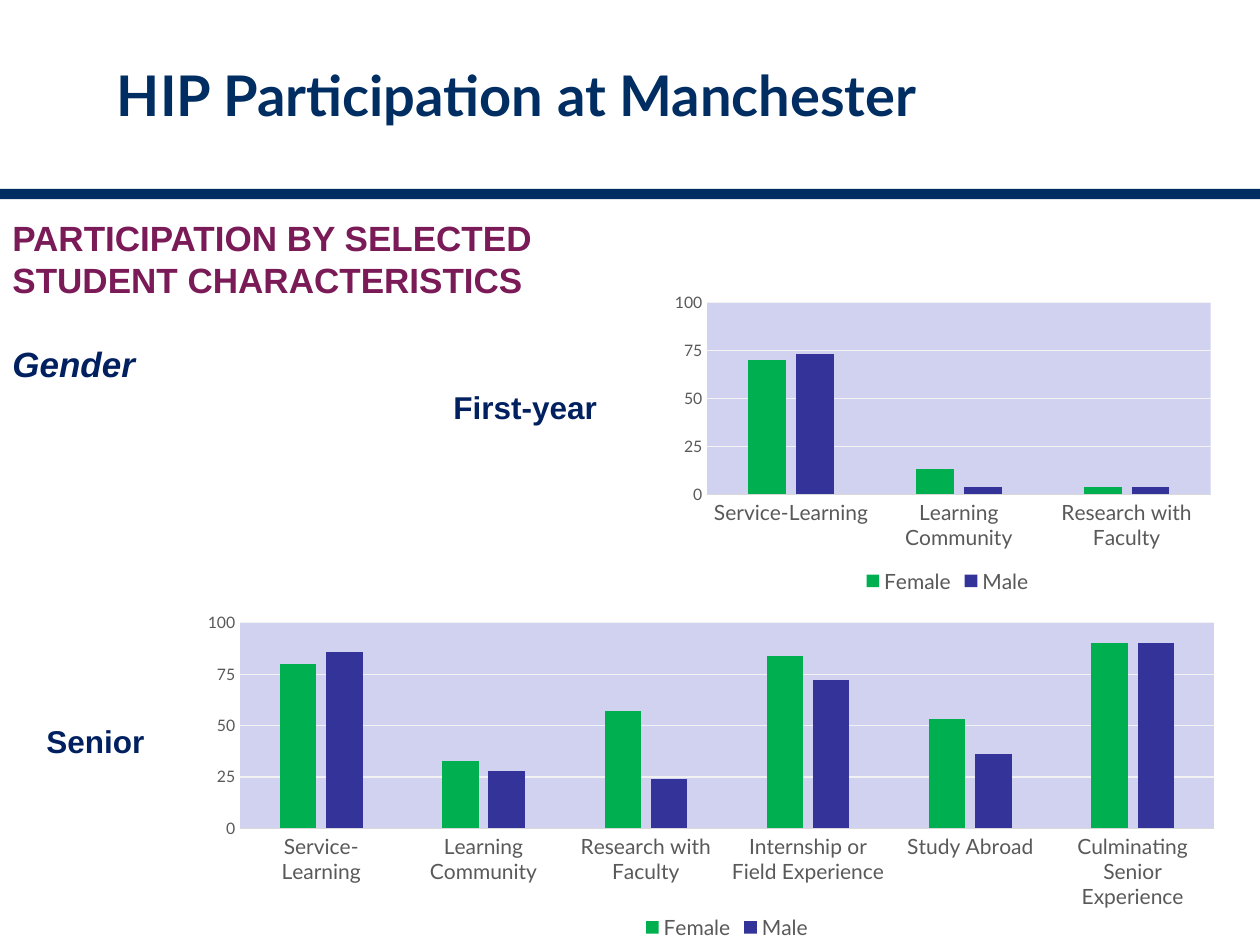
from pptx import Presentation
from pptx.chart.data import CategoryChartData
from pptx.dml.color import RGBColor
from pptx.enum.chart import XL_CHART_TYPE as CT, XL_LEGEND_POSITION as LP, XL_TICK_MARK as TM
from pptx.enum.shapes import MSO_SHAPE as SHAPE
from pptx.enum.text import MSO_ANCHOR as ANCHOR
from pptx.oxml import parse_xml
from pptx.oxml.ns import nsdecls, qn
from pptx.util import Inches, Pt

COLORS = {
    "navy": "002D62", "ink": "002060", "plum": "7A1A57", "grey": "595959",
    "axis": "D9D9D9", "grid": "F2F2F2", "plot": "D1D1F0", "white": "FFFFFF",
    "Female": "00B050", "Male": "333399", "black": "000000",
}
PRACTICES = ["Service-Learning", "Learning Community", "Research with Faculty"]
SENIOR_PRACTICES = PRACTICES + [
    "Internship or Field Experience", "Study Abroad", "Culminating Senior Experience"]


def rgb(name):
    return RGBColor.from_string(COLORS[name])


def set_font(font, size, color="grey", name="Lato", bold=False, italic=False):
    font.size, font.name, font.bold, font.italic = Pt(size), name, bold, italic
    font.color.rgb = rgb(color)


def add_run(p, text, **fmt):
    r = p.add_run()
    r.text = text
    set_font(r.font, **fmt)


def fill_xml(color):
    return parse_xml(
        f'<c:spPr {nsdecls("c", "a")}><a:solidFill><a:srgbClr val="{COLORS[color]}"/>'
        '</a:solidFill><a:ln><a:noFill/></a:ln></c:spPr>')


def layout_xml(x, y, w, h):
    return parse_xml(
        f'<c:layout {nsdecls("c")}><c:manualLayout><c:layoutTarget val="inner"/>'
        '<c:xMode val="edge"/><c:yMode val="edge"/>'
        f'<c:x val="{x}"/><c:y val="{y}"/><c:w val="{w}"/><c:h val="{h}"/>'
        '</c:manualLayout></c:layout>')


class Deck:
    """Holds the style and current slide; boxes are percentages of the slide's size."""

    def __init__(self, width, height):
        self.prs = Presentation()
        self.prs.slide_width, self.prs.slide_height = Inches(width), Inches(height)
        self.s = self.prs.slides.add_slide(self.prs.slide_layouts[6])

    def place(self, x, y, w, h):
        sw, sh = self.prs.slide_width, self.prs.slide_height
        return [round(v * size / 100) for v, size in ((x, sw), (y, sh), (w, sw), (h, sh))]

    def bar(self, box, color):
        sp = self.s.shapes.add_shape(SHAPE.RECTANGLE, *self.place(*box))
        sp.shadow.inherit = False
        sp.fill.solid()
        sp.fill.fore_color.rgb = rgb(color)
        sp.line.fill.background()

    def text(self, box, text, anchor=ANCHOR.TOP, **fmt):
        tf = self.s.shapes.add_textbox(*self.place(*box)).text_frame
        tf.word_wrap = True
        tf.vertical_anchor = anchor
        add_run(tf.paragraphs[0], text, **fmt)
        return tf

    def columns(self, box, plot, categories, series):
        data = CategoryChartData(number_format="0")
        data.categories = categories
        for name, values in series.items():
            data.add_series(name, values)
        chart = self.s.shapes.add_chart(CT.COLUMN_CLUSTERED, *self.place(*box), data).chart
        set_font(chart.font, 10, "black")
        chart.has_title = False
        chart.has_legend = True
        chart.legend.position = LP.BOTTOM
        chart.legend.include_in_layout = False
        set_font(chart.legend.font, 12)

        bars = chart.plots[0]
        bars.gap_width, bars.overlap, bars.vary_by_categories = 219, -27, False
        for ser in bars.series:
            ser.format.fill.solid()
            ser.format.fill.fore_color.rgb = rgb(ser.name)

        for axis, size in ((chart.category_axis, 12), (chart.value_axis, 9)):
            axis.major_tick_mark = axis.minor_tick_mark = TM.NONE
            set_font(axis.tick_labels.font, size)
        self.line(chart.category_axis.format.line, "axis")
        val = chart.value_axis
        val.minimum_scale, val.maximum_scale, val.major_unit = 0, 100, 25
        val.tick_labels.number_format = "0"
        val.tick_labels.number_format_is_linked = False
        val.format.line.fill.background()
        self.line(val.major_gridlines.format.line, "grid")

        body = chart.element.find(qn("c:chart"))
        body.addnext(fill_xml("white"))
        area = body.find(qn("c:plotArea"))
        for old in area.findall(qn("c:layout")):
            area.remove(old)
        area.insert(0, layout_xml(*plot))
        area.append(fill_xml("plot"))

    def line(self, line, color):
        line.color.rgb = rgb(color)
        line.width = Pt(0.75)


def main():
    deck = Deck(10, 7.5)
    deck.bar((0, 20, 100, 1.07), "navy")
    deck.text((8.3, 1.6, 88.3, 16.67), "HIP Participation at Manchester",
              ANCHOR.MIDDLE, size=32, color="navy", bold=True)

    heading = dict(size=20, name="Arial", bold=True)
    tf = deck.text((0, 22.22, 49.2, 19.33),
                   "PARTICIPATION BY SELECTED STUDENT CHARACTERISTICS",
                   color="plum", **heading)
    p = tf.add_paragraph()
    p.space_before = Pt(24)
    add_run(p, "Gender", color="ink", italic=True, **heading)

    deck.columns((52.5, 30, 45.4, 33.33), (0.08, 0.06, 0.88, 0.61), PRACTICES,
                 {"Female": (70, 13, 4), "Male": (73, 4, 4)})
    deck.columns((15.7, 63.73, 84, 36.27), (0.04, 0.06, 0.92, 0.6), SENIOR_PRACTICES,
                 {"Female": (80, 33, 57, 84, 53, 90), "Male": (86, 28, 24, 72, 36, 90)})

    label = dict(size=18, name="Arial", color="ink", bold=True)
    deck.text((35, 40.4, 14.2, 5.33), "First-year", **label)
    deck.text((2.7, 75.73, 11.2, 5.33), "Senior", **label)
    deck.prs.save("out.pptx")


if __name__ == "__main__":
    main()
